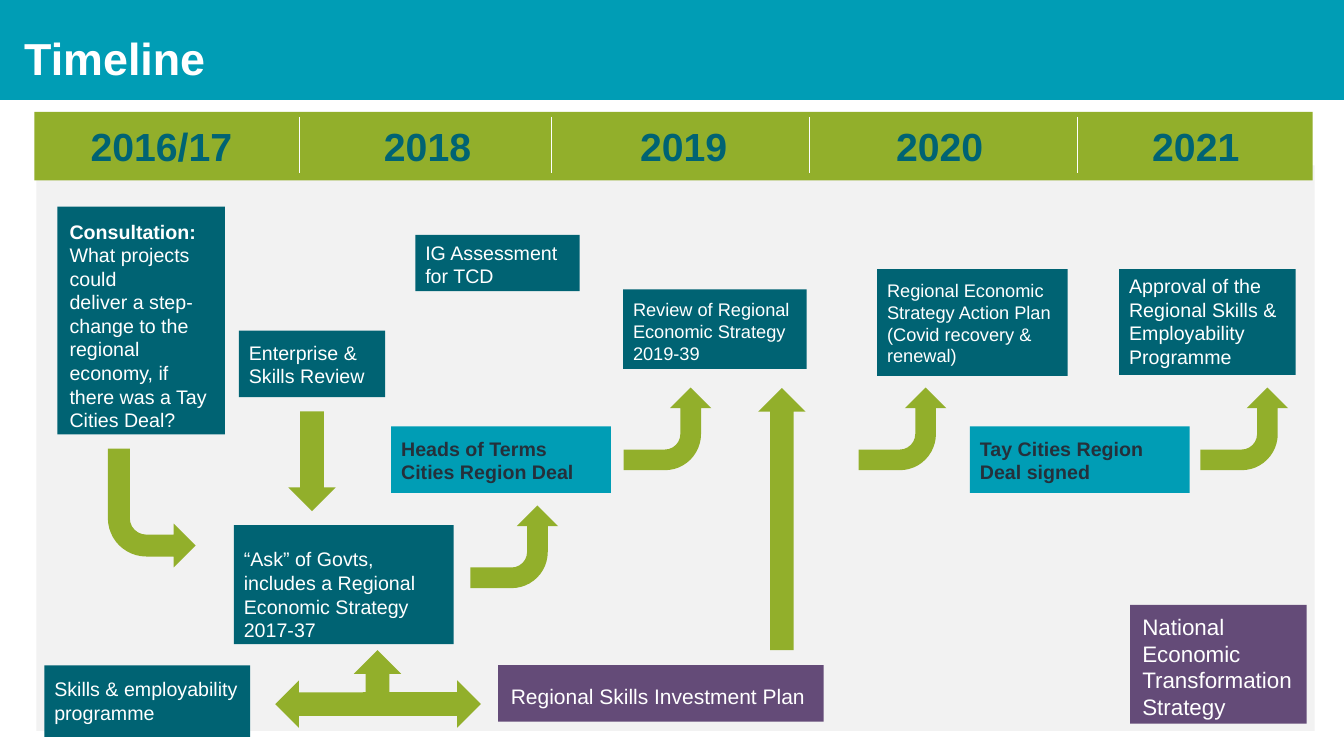
from dataclasses import dataclass

import pptx
import pptx.dml.color
import pptx.enum.shapes
import pptx.enum.text
import pptx.oxml
import pptx.util
from pptx.util import Inches

RGBColor = pptx.dml.color.RGBColor
Shape = pptx.enum.shapes.MSO_SHAPE
Align = pptx.enum.text.PP_ALIGN
Anchor = pptx.enum.text.MSO_ANCHOR

TEAL = RGBColor(0x00, 0x9D, 0xB5)
DARK_TEAL = RGBColor(0x00, 0x63, 0x73)
GREEN = RGBColor(0x92, 0xAF, 0x2B)
PURPLE = RGBColor(0x64, 0x4B, 0x78)
GREY = RGBColor(0xF2, 0xF2, 0xF2)
INK = RGBColor(0x25, 0x30, 0x3B)
WHITE = RGBColor(0xFF, 0xFF, 0xFF)


@dataclass
class Box:
    left: float
    top: float
    width: float
    height: float

    def inner(self, left, top, width, height):
        return Box(self.left + left, self.top + top, width, height)

    def lengths(self):
        return [Inches(v) for v in (self.left, self.top, self.width, self.height)]


def set_format(target, values):
    for name, value in values.items():
        setattr(target, name, value)


def set_margins(frame, left, top, right, bottom):
    set_format(frame, {"margin_left": Inches(left), "margin_top": Inches(top),
                       "margin_right": Inches(right), "margin_bottom": Inches(bottom)})


def write(para, text, size, color, bold=False, align=Align.LEFT):
    para.alignment = align
    span = para.add_run()
    span.text = text
    set_format(span.font, {"name": "Arial", "size": pptx.util.Pt(size), "bold": bold})
    span.font.color.rgb = color


def add_filled(page, kind, box, color):
    shape = page.shapes.add_shape(kind, *box.lengths())
    shape.shadow.inherit = False
    shape.fill.solid()
    shape.fill.fore_color.rgb = color
    shape.line.fill.background()
    return shape


def add_title(page, box):
    title = page.shapes.title
    left, top, width, height = box.lengths()
    set_format(title, {"left": left, "top": top, "width": width, "height": height})
    title.fill.solid()
    title.fill.fore_color.rgb = TEAL
    frame = title.text_frame
    set_format(frame, {"word_wrap": True, "vertical_anchor": Anchor.MIDDLE,
                       "auto_size": pptx.enum.text.MSO_AUTO_SIZE.NONE})
    set_margins(frame, 0.24, 0.21, 0.1, 0.05)
    write(frame.paragraphs[0], "Timeline", 32, WHITE, bold=True)


def add_year_bar(page, box):
    add_filled(page, Shape.RECTANGLE, box, GREEN)

    # Years, by the centre of each label
    label_width = 1.8
    years = {"2016/17": 1.26, "2018": 3.9, "2019": 6.44, "2020": 8.98, "2021": 11.52}
    for year, centre in years.items():
        place = box.inner(centre - label_width / 2, 0.05, label_width, 0.57)
        label = page.shapes.add_textbox(*place.lengths())
        label.text_frame.word_wrap = True
        write(label.text_frame.paragraphs[0], year, 28, DARK_TEAL, True, Align.CENTER)

    # Dividers between the years
    for offset in (2.63, 5.13, 7.69, 10.35):
        x = Inches(box.left + offset)
        divider = page.shapes.add_connector(
            pptx.enum.shapes.MSO_CONNECTOR.STRAIGHT,
            x, Inches(box.top + 0.05), x, Inches(box.top + 0.61))
        divider.line.color.rgb = WHITE
        divider.line.width = pptx.util.Pt(0.5)
        divider._element.spPr.append(pptx.oxml.parse_xml(
            '<a:effectLst xmlns:a="http://schemas.openxmlformats.org/drawingml/2006/main"/>'))


def add_card(page, box, inset, lines, fill=DARK_TEAL, size=14, color=WHITE,
             align=Align.LEFT):
    """Draw a filled card; lines holds (text, bold), inset is left, top, right."""
    card = add_filled(page, Shape.RECTANGLE, box, fill)
    frame = card.text_frame
    set_format(frame, {"word_wrap": True, "vertical_anchor": Anchor.TOP})
    set_margins(frame, *inset, 0)
    for index, (text, bold) in enumerate(lines):
        para = frame.add_paragraph() if index else frame.paragraphs[0]
        write(para, text, size, color, bold, align)


def add_arrow(page, kind, box, rotation):
    arrow = add_filled(page, kind, box, GREEN)
    arrow.rotation = rotation
    if kind == Shape.BENT_ARROW:
        arrow._element.spPr.get_or_add_xfrm().set("flipV", "1")


def add_board(page, box):
    add_filled(page, Shape.RECTANGLE, box, GREY)

    # Consultation card
    add_card(page, box.inner(0.21, 0.41, 1.66, 2.26), (0.12, 0.13, 0.11), [
        ("Consultation:", True),
        ("What projects could", False),
        ("deliver a step-change to the regional economy, if there was a Tay Cities Deal?",
         False)])

    # Milestones: place, top inset, text, text size
    milestones = [
        ((2.01, 1.64, 1.45, 0.66), 0.10, "Enterprise & Skills Review", 14),
        ((3.76, 0.69, 1.63, 0.56), 0.06, "IG Assessment for TCD", 14),
        ((5.82, 1.23, 1.82, 0.79), 0.09,
         "Review of Regional Economic Strategy 2019-39", 13),
        ((8.34, 1.03, 1.89, 1.06), 0.10,
         "Regional Economic Strategy Action Plan (Covid recovery & renewal)", 13),
        ((10.74, 1.03, 1.75, 1.05), 0.05,
         "Approval of the Regional Skills & Employability Programme", 14),
        ((1.96, 3.57, 2.18, 1.18), 0.22,
         "“Ask” of Govts, includes a Regional Economic Strategy 2017-37", 14),
        ((0.08, 4.96, 2.04, 0.71), 0.12, "Skills & employability programme", 14),
    ]
    for place, top, text, size in milestones:
        add_card(page, box.inner(*place), (0.1, top, 0.08), [(text, False)], size=size)

    # Deals
    deals = {3.52: "Heads of Terms Cities Region Deal", 9.26: "Tay Cities Region Deal signed"}
    for left, text in deals.items():
        add_card(page, box.inner(left, 2.59, 2.18, 0.66), (0.1, 0.1, 0.1),
                 [(text, True)], fill=TEAL, color=INK)

    # Plans
    add_card(page, box.inner(4.58, 4.96, 3.23, 0.56), (0.07, 0.18, 0.13),
             [("Regional Skills Investment Plan", False)],
             fill=PURPLE, size=15, align=Align.CENTER)
    add_card(page, box.inner(10.85, 4.36, 1.75, 1.18), (0.12, 0.08, 0.08),
             [("National Economic Transformation Strategy", False)], fill=PURPLE, size=16)

    # Bent arrows
    add_arrow(page, Shape.BENT_ARROW, box.inner(0.71, 2.81, 0.87, 1.18), 0)
    for left, top in ((4.33, 3.35), (5.85, 2.18), (8.18, 2.18), (11.57, 2.18)):
        add_arrow(page, Shape.BENT_ARROW, box.inner(left, top, 0.82, 0.87), 270)

    # Straight arrows: left, top, length, rotation
    for left, top, length, rotation in (
            (7.16, 2.21, 2.6, 0), (2.5, 2.44, 0.99, 180), (3.15, 4.81, 0.59, 0),
            (2.72, 4.76, 1.17, 270), (3.59, 4.76, 1.17, 90)):
        add_arrow(page, Shape.UP_ARROW, box.inner(left, top, 0.47, length), rotation)


def main():
    deck = pptx.Presentation()
    deck.slide_width, deck.slide_height = Inches(13.33), Inches(7.5)
    page = deck.slides.add_slide(deck.slide_layouts[5])
    add_title(page, Box(0, 0, 13.33, 0.99))
    add_board(page, Box(0.36, 1.64, 12.68, 5.61))
    add_year_bar(page, Box(0.34, 1.11, 12.68, 0.68))
    deck.save("out.pptx")


if __name__ == "__main__":
    main()
